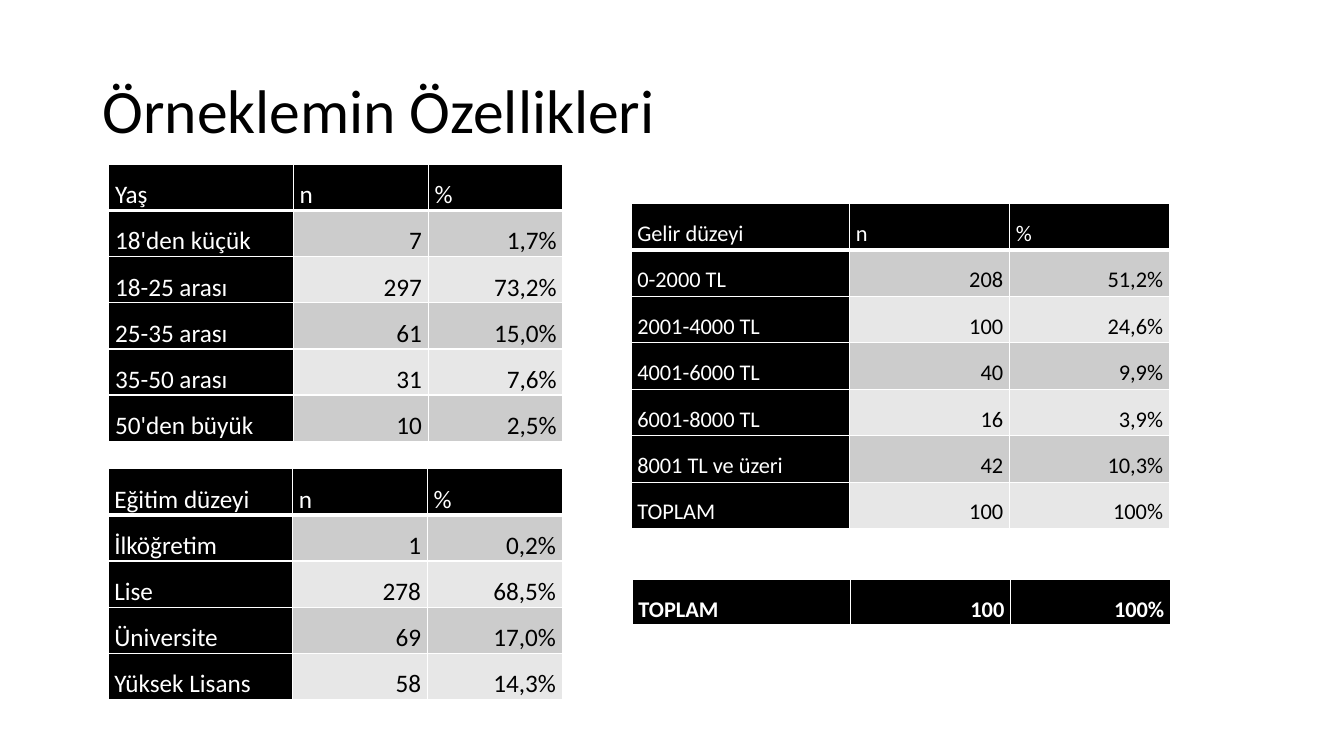
from lxml.etree import fromstring
from pptx import Presentation
from pptx.dml.color import RGBColor
from pptx.enum.text import MSO_ANCHOR as Anchor, PP_ALIGN as Align
from pptx.oxml.ns import nsdecls
from pptx.util import Cm, Pt

BLACK = RGBColor(0x00, 0x00, 0x00)
WHITE = RGBColor(0xFF, 0xFF, 0xFF)
BANDS = (RGBColor(0xCC, 0xCC, 0xCC), RGBColor(0xE7, 0xE7, 0xE7))

# Table contents: the first row is the header
AGE = [
    ("Yaş", "n", "%"),
    ("18'den küçük", "7", "1,7%"),
    ("18-25 arası", "297", "73,2%"),
    ("25-35 arası", "61", "15,0%"),
    ("35-50 arası", "31", "7,6%"),
    ("50'den büyük", "10", "2,5%"),
]
INCOME = [
    ("Gelir düzeyi", "n", "%"),
    ("0-2000 TL", "208", "51,2%"),
    ("2001-4000 TL", "100", "24,6%"),
    ("4001-6000 TL", "40", "9,9%"),
    ("6001-8000 TL", "16", "3,9%"),
    ("8001 TL ve üzeri", "42", "10,3%"),
    ("TOPLAM", "100", "100%"),
]
EDUCATION = [
    ("Eğitim düzeyi", "n", "%"),
    ("İlköğretim", "1", "0,2%"),
    ("Lise", "278", "68,5%"),
    ("Üniversite", "69", "17,0%"),
    ("Yüksek Lisans", "58", "14,3%"),
]
TOTAL = [("TOPLAM", "100", "100%")]


class SlideBuilder:
    """Holds the style and the current slide."""

    font_name = "Calibri"

    def __init__(self, page):
        self.page = page

    def style(self, para, size, color, align, spacing, bold=False):
        para.alignment, para.line_spacing = align, spacing
        font = para.font
        font.name, font.size, font.bold = self.font_name, Pt(size), bold
        font.color.rgb = color

    def title(self, text, left, top, width, height):
        box = self.page.shapes.title
        box.left, box.top = Cm(left), Cm(top)
        box.width, box.height = Cm(width), Cm(height)
        box.text_frame.text = text
        box.text_frame.vertical_anchor = Anchor.MIDDLE
        self.style(box.text_frame.paragraphs[0], 44, BLACK, Align.LEFT, 0.9)

    def borders(self, cell, top, bottom):
        """Draw white borders; they stand before the fill in the cell properties."""
        sides = {"lnL": 1, "lnR": 1, "lnT": top, "lnB": bottom}
        properties = cell._tc.get_or_add_tcPr()
        for index, (side, points) in enumerate(sides.items()):
            properties.insert(index, fromstring(
                f'<a:{side} {nsdecls("a")} w="{Pt(points)}"><a:solidFill>'
                f'<a:srgbClr val="{WHITE}"/></a:solidFill></a:{side}>'))

    def table(self, rows, left, top, widths, row_height, size, bold=False):
        table = self.page.shapes.add_table(
            len(rows), len(widths), Cm(left), Cm(top),
            Cm(sum(widths)), Cm(row_height * len(rows))).table
        for column, width in zip(table.columns, widths):
            column.width = Cm(width)
        for r, values in enumerate(rows):
            table.rows[r].height = Cm(row_height)
            for c, value in enumerate(values):
                dark = r == 0 or c == 0
                cell = table.cell(r, c)
                cell.text = value
                cell.vertical_anchor = Anchor.MIDDLE
                cell.margin_left = cell.margin_right = Cm(0.16)
                cell.margin_top = cell.margin_bottom = 0
                cell.fill.solid()
                cell.fill.fore_color.rgb = BLACK if dark else BANDS[(r - 1) % 2]
                self.borders(cell, top=3 if r == 1 else 1, bottom=3 if r == 0 else 1)
                is_number = c > 0 and value[0].isdigit()
                self.style(cell.text_frame.paragraphs[0], size,
                           WHITE if dark else BLACK,
                           Align.RIGHT if is_number else Align.JUSTIFY, 1.5, bold)


def main():
    deck = Presentation()
    deck.slide_width, deck.slide_height = Cm(33.87), Cm(19.05)
    builder = SlideBuilder(deck.slides.add_slide(deck.slide_layouts[5]))

    # Title
    builder.title("Örneklemin Özellikleri", 2.33, 1.01, 29.21, 3.68)

    # Left: age and education
    left_widths = (4.65, 3.4, 3.4)
    builder.table(AGE, 2.74, 4.14, left_widths, 1.16, 18)
    builder.table(EDUCATION, 2.72, 11.81, left_widths, 1.16, 18)

    # Right: income and the overall total
    right_widths = (5.51, 4.03, 4.03)
    builder.table(INCOME, 15.9, 5.13, right_widths, 1.17, 16)
    builder.table(TOTAL, 15.93, 14.61, right_widths, 1.17, 16, bold=True)

    deck.save("out.pptx")


if __name__ == "__main__":
    main()
